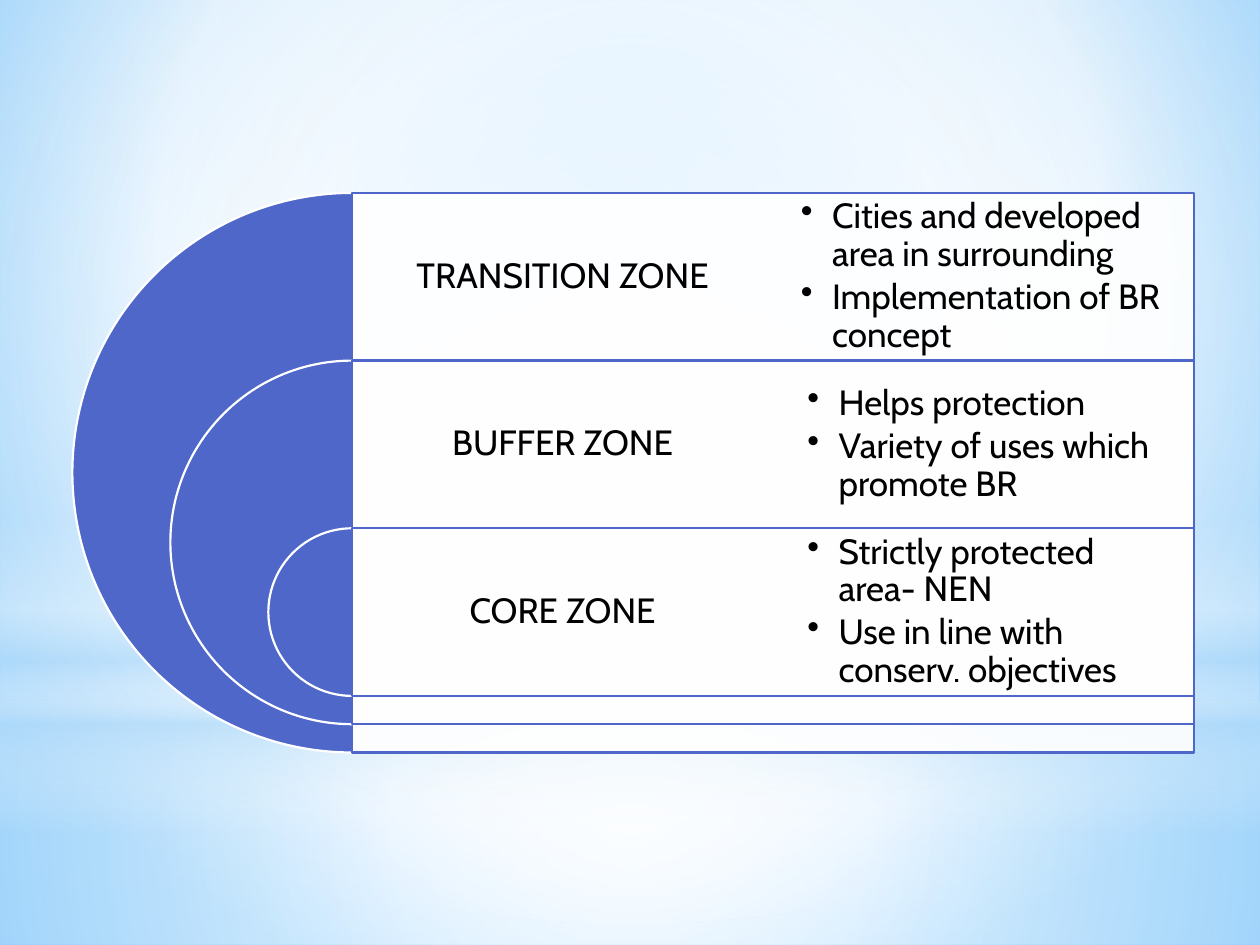
from lxml import etree
from pptx import Presentation
from pptx.dml.color import RGBColor
from pptx.enum.shapes import MSO_SHAPE
from pptx.enum.text import MSO_ANCHOR, PP_ALIGN
from pptx.oxml.ns import qn
from pptx.util import Cm, Pt

RECTANGLE, ELLIPSE, PIE = MSO_SHAPE.RECTANGLE, MSO_SHAPE.OVAL, MSO_SHAPE.PIE
MIDDLE = MSO_ANCHOR.MIDDLE
LEFT, CENTER = PP_ALIGN.LEFT, PP_ALIGN.CENTER

COLORS = {
    "white": "FFFFFF",
    "text": "000000",
    "zone": "4E67C8",
    "haze": "B4DCFA",
    "sky": "9ED5FF",
    "deep_sky": "5BB9FF",
}
PAGE_WIDTH, PAGE_HEIGHT = 25.4, 19.05
MIDPOINT = (50, 50, 50, 50)

# Gradient stops are (position %, colour, opacity %).
BACKGROUND = [(0, "sky", 78), (60, "white", 100), (100, "deep_sky", 100)]
BACKDROPS = [
    (RECTANGLE, 14.17, 4.88, MIDPOINT,
     [(0, "white", 91), (37, "white", 76), (100, "haze", 79)]),
    (RECTANGLE, 0, 14.17, MIDPOINT,
     [(0, "white", 89), (48, "white", 62), (100, "haze", 79)]),
    (RECTANGLE, 10.46, 6.35, None,
     [(0, "white", 0), (29, "white", 30), (45, "haze", 40),
      (55, "white", 26), (65, "haze", 60), (100, "white", 0)]),
    (ELLIPSE, 4.45, 14.17, MIDPOINT, [(0, "white", 100), (56, "white", 0)]),
]

ZONES = [
    ("TRANSITION ZONE",
     ["Cities and developed area in surrounding", "Implementation of BR concept"]),
    ("BUFFER ZONE", ["Helps protection", "Variety of uses which promote BR"]),
    ("CORE ZONE",
     ["Strictly protected area- NEN", "Use in line with conserv. objectives"]),
]
AXIS, TOP = 7.1, 3.89
ROW_HEIGHT = 3.38
OUTER_DIAMETER, DIAMETER_STEP = 11.28, 3.95
BAND_WIDTH = 16.97
COLUMN_WIDTH = BAND_WIDTH / 2
FIRST_DETAIL_EXTRA = 0.13


def apply(target, values):
    for name, value in values.items():
        setattr(target, name, value)


def add_color(parent, color, opacity):
    node = etree.SubElement(parent, qn("a:srgbClr"), val=COLORS[color])
    if opacity < 100:
        etree.SubElement(node, qn("a:alpha"), val=str(opacity * 1000))


def set_gradient(fill, owner, stops, focus):
    """Fill with a circular gradient around focus, or a vertical one without it."""
    fill.solid()
    solid = owner.find(".//" + qn("a:solidFill"))
    gradient = etree.Element(qn("a:gradFill"), rotWithShape="1")
    stop_list = etree.SubElement(gradient, qn("a:gsLst"))
    for position, color, opacity in stops:
        stop = etree.SubElement(stop_list, qn("a:gs"), pos=str(position * 1000))
        add_color(stop, color, opacity)
    if focus:
        circle = etree.SubElement(gradient, qn("a:path"), path="circle")
        edges = {side: str(share * 1000) for side, share in zip("ltrb", focus)}
        etree.SubElement(circle, qn("a:fillToRect"), **edges)
    else:
        etree.SubElement(gradient, qn("a:lin"), ang="5400000", scaled="0")
    solid.getparent().replace(solid, gradient)


class ZonePage:
    """Holds the text style and the slide being drawn."""

    font = {"name": "Cabin", "size": Pt(20)}
    label = {"alignment": CENTER, "line_spacing": 0.9, "space_after": Pt(7)}
    detail = {"alignment": LEFT, "line_spacing": 0.9, "space_after": Pt(3), "level": 1}

    def __init__(self, page):
        self.page = page

    def background(self, stops, focus):
        set_gradient(self.page.background.fill, self.page.element, stops, focus)

    def shape(self, kind, left, top, width, height):
        shape = self.page.shapes.add_shape(
            kind, Cm(left), Cm(top), Cm(width), Cm(height))
        shape.shadow.inherit = False
        return shape

    def backdrop(self, kind, top, height, focus, stops):
        shape = self.shape(kind, 0, top, PAGE_WIDTH, height)
        set_gradient(shape.fill, shape.element, stops, focus)
        shape.line.fill.background()

    def paint(self, shape, fill, line, opacity=100):
        shape.fill.solid()
        solid = shape.element.spPr.find(qn("a:solidFill"))
        add_color(solid, fill, opacity)
        shape.line.color.rgb = RGBColor.from_string(COLORS[line])
        shape.line.width = Pt(1.25)

    def half_disc(self, top, diameter):
        shape = self.shape(PIE, AXIS - diameter / 2, top, diameter, diameter)
        shape.adjustments[0], shape.adjustments[1] = 54, 162
        self.paint(shape, "zone", "white")

    def band(self, top, height):
        shape = self.shape(RECTANGLE, AXIS, top, BAND_WIDTH, height)
        self.paint(shape, "white", "zone", opacity=90)

    def text(self, lines, left, top, width, inset, style, bulleted=False):
        box = self.page.shapes.add_textbox(
            Cm(left), Cm(top), Cm(width), Cm(ROW_HEIGHT))
        frame = box.text_frame
        apply(frame, {"word_wrap": True, "vertical_anchor": MIDDLE})
        apply(frame, {f"margin_{side}": Cm(inset)
                      for side in ("left", "top", "right", "bottom")})
        frame.text = "\n".join(lines)
        for para in frame.paragraphs:
            apply(para, style)
            for span in para.runs:
                apply(span.font, self.font)
                span.font.color.rgb = RGBColor.from_string(COLORS["text"])
            if bulleted:
                self.bullet(para)

    def bullet(self, para):
        properties = para._p.get_or_add_pPr()
        indent = Cm(0.63)
        properties.set("marL", str(indent))
        properties.set("indent", str(-indent))
        etree.SubElement(properties, qn("a:buChar"), char="•")


def main():
    deck = Presentation()
    deck.slide_width, deck.slide_height = Cm(PAGE_WIDTH), Cm(PAGE_HEIGHT)
    zone_page = ZonePage(deck.slides.add_slide(deck.slide_layouts[6]))

    zone_page.background(BACKGROUND, (20, 10, 20, 60))
    for backdrop in BACKDROPS:
        zone_page.backdrop(*backdrop)

    for index, (name, details) in enumerate(ZONES):
        top = TOP + index * ROW_HEIGHT
        diameter = OUTER_DIAMETER - index * DIAMETER_STEP
        extra = FIRST_DETAIL_EXTRA if index == 0 else 0
        zone_page.half_disc(top, diameter)
        zone_page.band(top, diameter)
        zone_page.text([name], AXIS, top, COLUMN_WIDTH, 0.2, zone_page.label)
        zone_page.text(details, AXIS + COLUMN_WIDTH - extra, top,
                       COLUMN_WIDTH + 2 * extra, 0.69, zone_page.detail, bulleted=True)

    deck.save("out.pptx")


if __name__ == "__main__":
    main()
